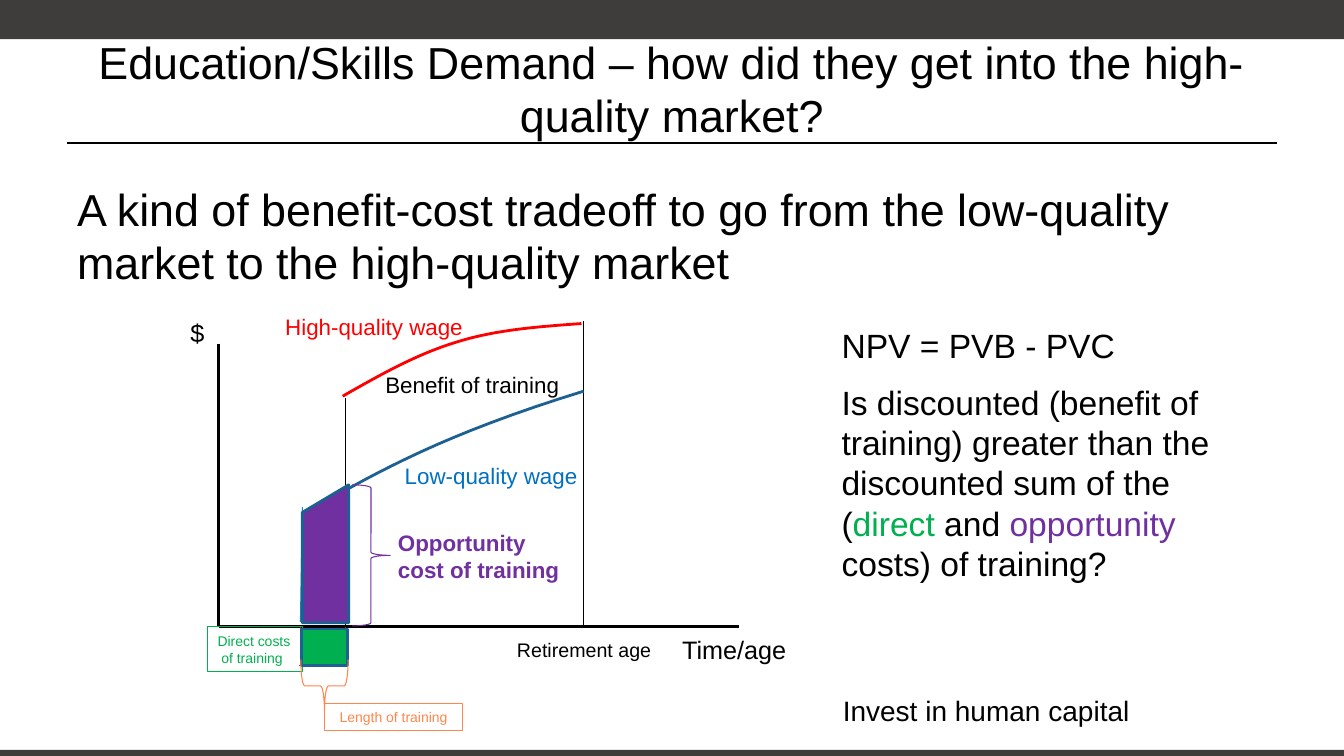
from dataclasses import dataclass

from lxml import etree
from pptx import Presentation
from pptx.dml.color import RGBColor
from pptx.enum import shapes, text
from pptx.oxml import ns
from pptx.util import Pt

SHAPE = shapes.MSO_SHAPE
LEFT, CENTER = text.PP_ALIGN.LEFT, text.PP_ALIGN.CENTER
TOP, MIDDLE = text.MSO_ANCHOR.TOP, text.MSO_ANCHOR.MIDDLE


@dataclass(frozen=True)
class Theme:
    font: str = "Arial"
    black: str = "000000"
    bar: str = "3E3D3C"
    red: str = "FF0000"
    blue: str = "1C6192"
    light_blue: str = "2181C6"
    low_label: str = "0070C0"
    green: str = "00B050"
    purple: str = "7030A0"
    orange: str = "FF864C"
    heading: int = 32
    question: int = 24
    conclusion: int = 20
    axis: int = 18
    label: int = 16
    age: int = 14
    note: int = 10
    hairline: float = 0.75
    rule: float = 1.25
    curve: float = 2


T = Theme()


def rgb(value):
    return RGBColor.from_string(value)


def write(sp, paragraphs, size, color=T.black, align=LEFT, anchor=TOP,
          wrap=True, bold=False, before=0):
    """Each paragraph is a list of (text, color) runs or one string."""
    tf = sp.text_frame
    tf.word_wrap, tf.vertical_anchor = wrap, anchor
    tf.auto_size = text.MSO_AUTO_SIZE.NONE
    for i, runs in enumerate(paragraphs):
        p = tf.add_paragraph() if i else tf.paragraphs[0]
        p.alignment = align
        p.space_before = Pt(before)
        p.font.name, p.font.size, p.font.bold = T.font, Pt(size), bold
        p.font.color.rgb = rgb(color)
        if isinstance(runs, str):
            runs = [(runs, color)]
        for words, run_color in runs:
            r = p.add_run()
            r.text = words
            if run_color != color:
                r.font.color.rgb = rgb(run_color)


def add_text(slide, box, paragraphs, size, **style):
    sp = slide.shapes.add_textbox(*map(Pt, box))
    write(sp, paragraphs, size, **style)
    return sp


def paint(sp, fill=None, line=None, width=T.hairline):
    sp.shadow.inherit = False
    if fill:
        sp.fill.solid()
        sp.fill.fore_color.rgb = rgb(fill)
    else:
        sp.fill.background()
    if line:
        sp.line.color.rgb = rgb(line)
        sp.line.width = Pt(width)
    else:
        sp.line.fill.background()


def add_shape(slide, kind, box, rotation=0, **look):
    sp = slide.shapes.add_shape(kind, *map(Pt, box))
    sp.rotation = rotation
    paint(sp, **look)
    return sp


def add_line(slide, start, end, color=T.black, width=T.hairline):
    line = slide.shapes.add_connector(
        shapes.MSO_CONNECTOR.STRAIGHT, *map(Pt, start + end))
    line.line.color.rgb = rgb(color)
    line.line.width = Pt(width)
    etree.SubElement(line._element.spPr, ns.qn("a:effectLst"))


def add_curve(slide, knots, color, steps=16):
    """Draw joined cubic curves: a start, then three points for each curve."""
    points = []
    for i in range(0, len(knots) - 1, 3):
        a, b, c, d = knots[i:i + 4]
        for k in range(1, steps + 1):
            t = k / steps
            s = 1 - t
            points.append(tuple(
                Pt(s**3 * a[n] + 3 * s * s * t * b[n]
                   + 3 * s * t * t * c[n] + t**3 * d[n]) for n in (0, 1)))
    builder = slide.shapes.build_freeform(*map(Pt, knots[0]))
    builder.add_line_segments(points, close=False)
    paint(builder.convert_to_shape(), line=color, width=T.curve)


def add_frame(slide):
    for box in ((0, 0, 960, 28), (0, 535.6, 960, 4.4)):
        add_shape(slide, SHAPE.RECTANGLE, box, fill=T.bar)
    add_line(slide, (48, 102.2), (912, 102.2), width=T.rule)
    title = slide.shapes.title
    title.left, title.top, title.width, title.height = map(Pt, (48, 18, 864, 90))
    write(title, ["Education/Skills Demand – how did they get into the "
                  "high-quality market?"], T.heading, align=CENTER, anchor=MIDDLE)
    add_text(slide, (48, 126, 864, 70.6),
             ["A kind of benefit-cost tradeoff to go from the low-quality "
              "market to the high-quality market"], T.heading, before=6)


def add_wage_diagram(slide):
    # Axes
    add_line(slide, (156.2, 447.8), (527.8, 447.8), width=T.curve)
    add_line(slide, (156.2, 245.5), (156.2, 447.1), width=T.curve)
    add_text(slide, (480.2, 449.3, 88.6, 25.9), ["Time/age"], T.axis, wrap=False)
    add_text(slide, (128.9, 223.2, 21.6, 25.9), ["$"], T.axis, wrap=False)

    # Training period and retirement
    add_line(slide, (214.6, 444.2), (216, 362.2), T.light_blue)
    for start, end in (((214.6, 447.8), (214.6, 473)),
                       ((247, 475.2), (247, 445.7)),
                       ((213.8, 475.2), (247, 475.2))):
        add_line(slide, start, end, T.red)
    add_line(slide, (247, 284.4), (247, 447.8))
    add_line(slide, (416.9, 446.4), (416.9, 229))

    # Wage curves
    add_curve(slide, [(225.4, 362.2), (271.4, 336.2), (316.8, 310.3),
                      (416.9, 279.4)], T.blue)
    add_curve(slide, [(244.8, 283), (271.4, 267.8), (298.1, 252.7),
                      (326.9, 244.1), (355, 235.4), (385.2, 233.3),
                      (415.4, 231.1)], T.red)
    add_text(slide, (189.4, 220.3, 155.5, 26.6), ["High-quality wage"],
             T.label, color=T.red, align=CENTER)
    add_text(slide, (279.4, 326.9, 142.6, 26.6), ["Low-quality wage"],
             T.label, color=T.low_label, align=CENTER)
    add_text(slide, (267.1, 261.4, 140.4, 26.6), ["Benefit of training"],
             T.label, align=CENTER, wrap=False)
    add_text(slide, (360, 453.6, 114.5, 20.2), ["Retirement age"],
             T.age, align=CENTER, anchor=MIDDLE)

    # Costs of training
    direct = add_shape(slide, SHAPE.RECTANGLE, (148.3, 447.8, 67.7, 31.7),
                       line=T.green)
    write(direct, ["Direct costs", " of training"], T.note, color=T.green,
          anchor=MIDDLE)
    add_shape(slide, SHAPE.RECTANGLE, (215.3, 449.3, 33.1, 25.9),
              fill=T.green, line=T.blue, width=T.curve)
    add_shape(slide, SHAPE.FLOWCHART_MANUAL_INPUT, (216, 346.3, 33.1, 98.6),
              fill=T.purple, line=T.blue, width=T.curve)
    add_shape(slide, SHAPE.RIGHT_BRACE, (251.3, 346.3, 27.4, 100.8),
              line=T.purple)
    add_text(slide, (277.2, 374.4, 132.5, 46.1), ["Opportunity cost of training"],
             T.label, color=T.purple, bold=True)

    # Length of training
    add_shape(slide, SHAPE.LEFT_BRACE, (213.1, 473, 37.4, 33.8), rotation=270,
              line=T.orange)
    length = add_shape(slide, SHAPE.RECTANGLE, (231.8, 502.6, 98.6, 19.4),
                       line=T.orange)
    write(length, ["Length of training"], T.note, color=T.orange,
          align=CENTER, anchor=MIDDLE)


def add_question(slide):
    question = [("Is discounted (benefit of training) greater than the "
                 "discounted sum of the (", T.black),
                ("direct", T.green), (" and ", T.black),
                ("opportunity ", T.purple), ("costs) of training?", T.black)]
    sp = add_text(slide, (594, 228.2, 318.2, 193.7),
                  ["NPV = PVB - PVC", question], T.question)
    sp.text_frame.paragraphs[1].space_before = Pt(12)
    add_text(slide, (594, 491.8, 221, 31.7), ["Invest in human capital"],
             T.conclusion, align=CENTER, wrap=False)


def main():
    prs = Presentation()
    prs.slide_width, prs.slide_height = Pt(960), Pt(540)
    slide = prs.slides.add_slide(prs.slide_layouts[5])
    add_frame(slide)
    add_wage_diagram(slide)
    add_question(slide)
    prs.save("out.pptx")


if __name__ == "__main__":
    main()
